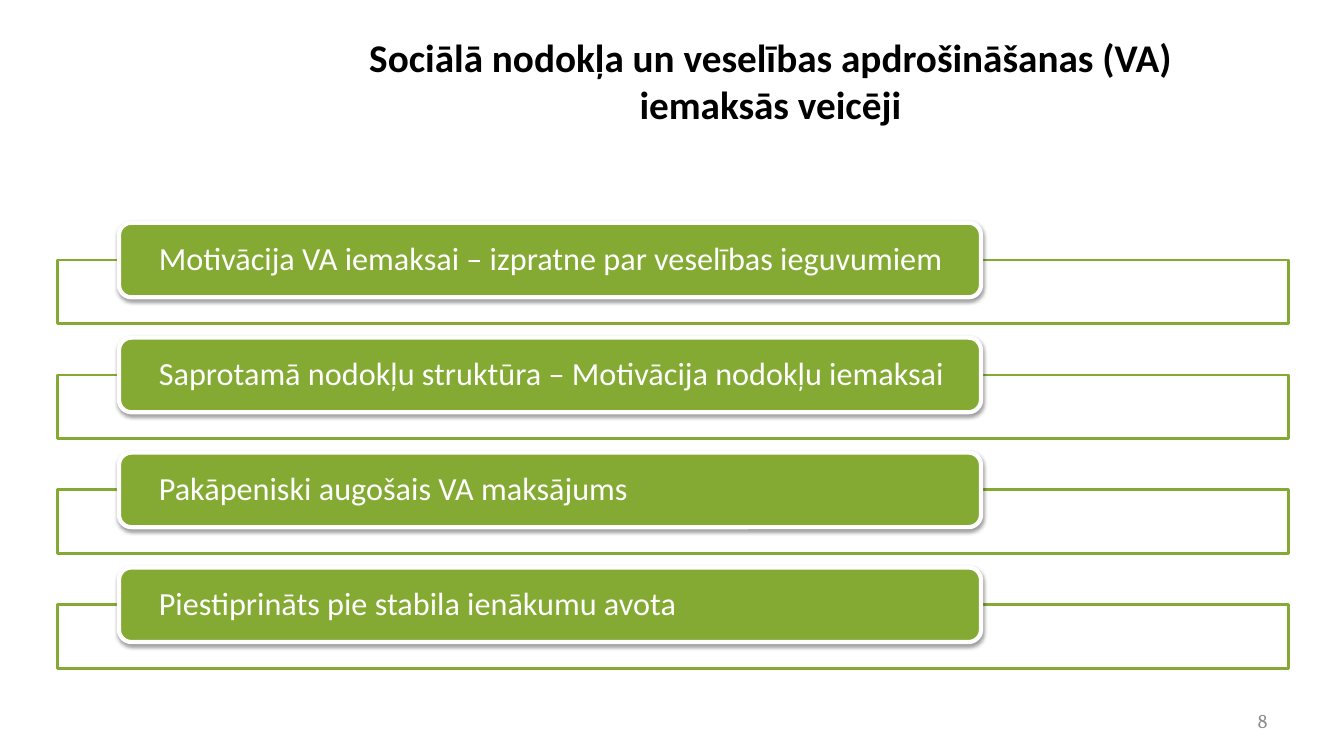
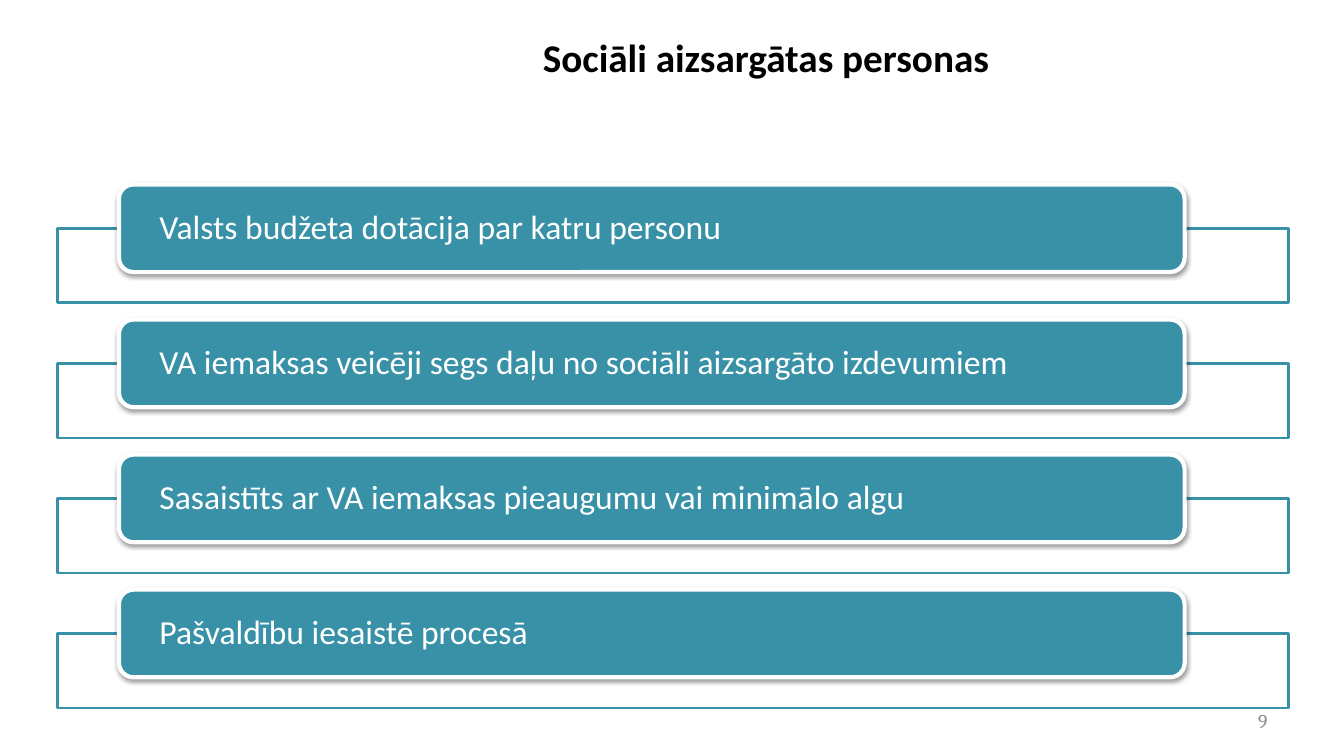
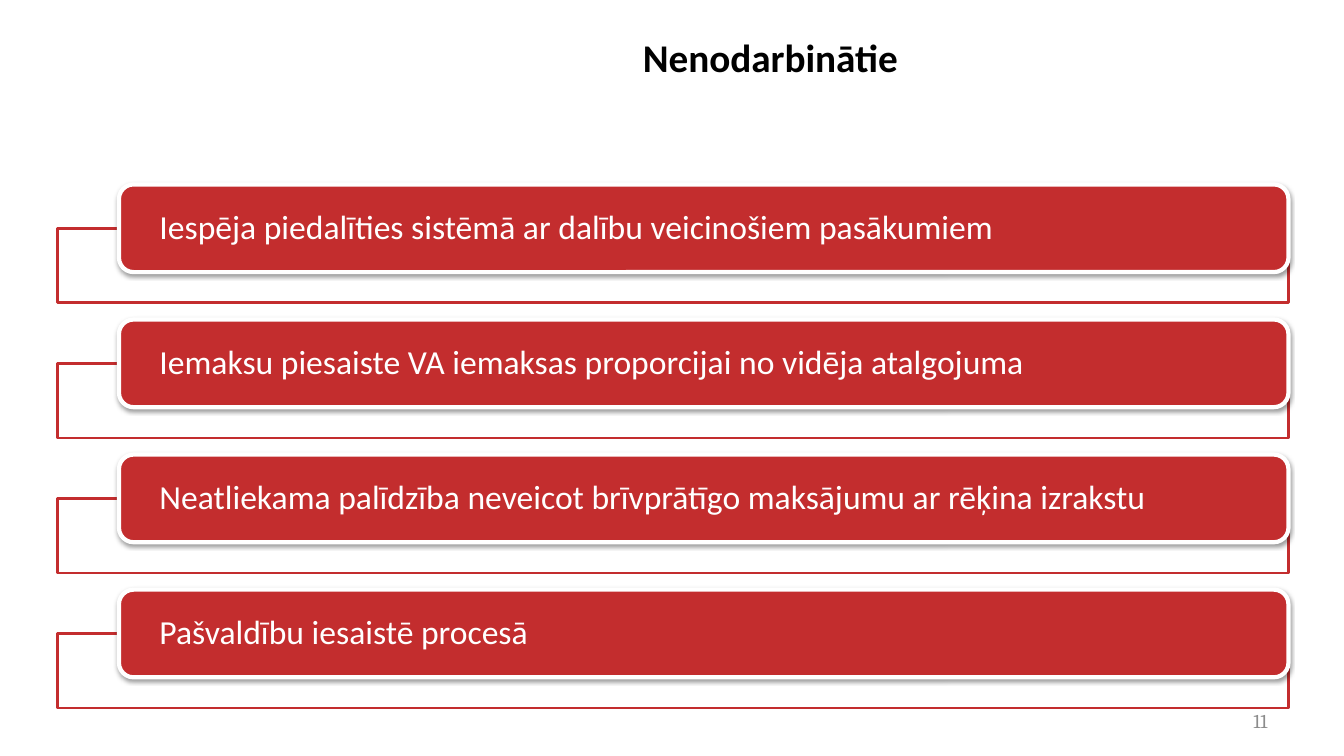
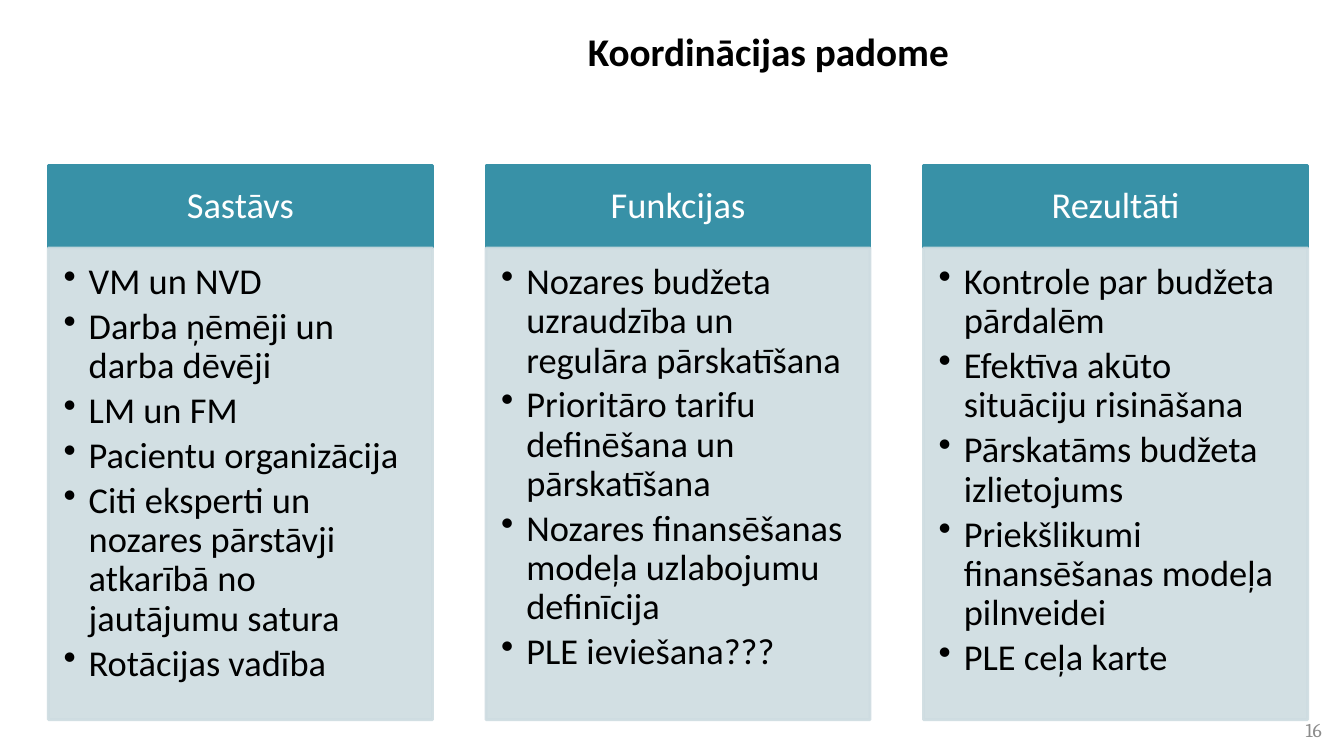
from lxml import etree
from pptx import Presentation
from pptx.dml.color import RGBColor
from pptx.enum import shapes, text
from pptx.oxml import ns
from pptx.util import Inches, Pt

GREEN, TEAL, RED = "84AA33", "3891A7", "C32D2E"
PALE, WHITE, BLACK, GREY = "CEDCE1", "FFFFFF", "000000", "8C8C8C"
LEFT, CENTER, RIGHT = text.PP_ALIGN.LEFT, text.PP_ALIGN.CENTER, text.PP_ALIGN.RIGHT
TOP, MIDDLE = text.MSO_ANCHOR.TOP, text.MSO_ANCHOR.MIDDLE
RECT, ROUND = shapes.MSO_SHAPE.RECTANGLE, shapes.MSO_SHAPE.ROUNDED_RECTANGLE


def rgb(value):
    return RGBColor.from_string(value)


def child(parent, tag, **attrs):
    return etree.SubElement(parent, ns.qn(tag), {k: str(v) for k, v in attrs.items()})


class Deck:
    def __init__(self):
        self.prs = Presentation()
        self.prs.slide_width = Inches(13.33)
        self.prs.slide_height = Inches(7.5)
        self.slide = None

    def start(self, title, number, left=3.44, top=0.28, height=1.04, number_at=(9.56, 6.95)):
        self.slide = self.prs.slides.add_slide(self.prs.slide_layouts[5])
        sp = self.slide.shapes.title
        sp.left, sp.top = Inches(left), Inches(top)
        sp.width, sp.height = Inches(8.4), Inches(height)
        self.set_text(sp, [title], 28, BLACK, align=CENTER, anchor=TOP, bold=True)
        box = self.slide.shapes.add_textbox(*map(Inches, (*number_at, 3.11, 0.4)))
        self.set_text(box, [number], 14, GREY, align=RIGHT, font="Cambria")

    def set_text(self, sp, lines, size, color, align=LEFT, anchor=MIDDLE,
                 insets=(0.1, 0.05, 0.1, 0.05), font="Calibri", bold=False,
                 spacing=1.0, after=0, bullets=False):
        tf = sp.text_frame
        tf.word_wrap = True
        tf.auto_size = text.MSO_AUTO_SIZE.NONE
        tf.vertical_anchor = anchor
        tf.margin_left, tf.margin_top, tf.margin_right, tf.margin_bottom = map(Inches, insets)
        for i, line in enumerate(lines):
            p = tf.add_paragraph() if i else tf.paragraphs[0]
            p.text = line
            if bullets:
                pPr = p._p.get_or_add_pPr()
                pPr.set("marL", str(Inches(0.25)))
                pPr.set("indent", str(Inches(-0.25)))
                child(pPr, "a:buChar", char="•")
            p.alignment = align
            p.line_spacing = spacing
            p.space_after = Pt(after)
            p.font.name, p.font.size, p.font.bold = font, Pt(size), bold
            p.font.color.rgb = rgb(color)

    def box(self, kind, at, fill, line, width=2, alpha=None):
        sp = self.slide.shapes.add_shape(kind, *map(Inches, at))
        sp.shadow.inherit = False
        sp.fill.solid()
        sp.fill.fore_color.rgb = rgb(fill)
        sp.line.color.rgb = rgb(line)
        sp.line.width = Pt(width)
        if alpha:
            for clr in sp._element.spPr.iter(ns.qn("a:srgbClr")):
                child(clr, "a:alpha", val=alpha * 1000)
        return sp

    def drop_shadow(self, sp):
        effects = sp._element.spPr.find(ns.qn("a:effectLst"))
        shadow = child(effects, "a:outerShdw", blurRad=Pt(3.1), dist=Pt(1.6),
                       dir=90 * 60000, rotWithShape=0)
        child(child(shadow, "a:srgbClr", val=BLACK), "a:alpha", val=38000)

    def banners(self, lines, color, top, pitch, width, height, frame_height, size):
        for i, line in enumerate(lines):
            y = top + i * pitch
            self.box(RECT, (0.57, y + height / 2, 12.21, frame_height), WHITE, color)
            sp = self.box(ROUND, (1.18, y, width, height), color, WHITE, width=3)
            self.drop_shadow(sp)
            self.set_text(sp, [line], size, WHITE, insets=(0.36, 0, 0.2, 0), spacing=0.9)

    def columns(self, groups):
        for i, (heading, items) in enumerate(groups):
            x = 0.48 + i * 4.34
            sp = self.box(RECT, (x, 1.64, 3.81, 0.82), TEAL, TEAL)
            self.set_text(sp, [heading], 26, WHITE, align=CENTER,
                          insets=(0.2, 0.12, 0.2, 0.12), spacing=0.9)
            sp = self.box(RECT, (x, 2.46, 3.81, 4.68), PALE, PALE, alpha=90)
            self.set_text(sp, items, 26, BLACK, anchor=TOP, insets=(0.15, 0.15, 0.2, 0.23),
                          spacing=0.9, after=4, bullets=True)


def main():
    deck = Deck()
    tall = dict(top=1.83, pitch=1.34, height=0.87, frame_height=0.74, size=24)

    deck.start("Sociālā nodokļa un veselības apdrošināšanas (VA) iemaksās veicēji", "8", height=1.51)
    deck.banners([
        "Motivācija VA iemaksai – izpratne par veselības ieguvumiem",
        "Saprotamā nodokļu struktūra – Motivācija nodokļu iemaksai",
        "Pakāpeniski augošais VA maksājums",
        "Piestiprināts pie stabila ienākumu avota",
    ], GREEN, top=2.21, pitch=1.14, width=8.55, height=0.74, frame_height=0.63, size=23)

    deck.start("Sociāli aizsargātas personas ", "9")
    deck.banners([
        "Valsts budžeta dotācija par katru personu",
        "VA iemaksas veicēji segs daļu no sociāli aizsargāto izdevumiem",
        "Sasaistīts ar VA iemaksas pieaugumu vai minimālo algu",
        "Pašvaldību iesaistē procesā",
    ], TEAL, width=10.57, **tall)

    deck.start("Nenodarbinātie", "11")
    deck.banners([
        "Iespēja piedalīties sistēmā ar dalību veicinošiem pasākumiem",
        "Iemaksu piesaiste VA iemaksas proporcijai no vidēja atalgojuma",
        "Neatliekama palīdzība neveicot brīvprātīgo maksājumu ar rēķina izrakstu",
        "Pašvaldību iesaistē procesā",
    ], RED, width=11.6, **tall)

    deck.start("Koordinācijas padome", "16", left=3.42, top=0.22, number_at=(10.1, 7.04))
    deck.columns([
        ("Sastāvs", [
            "VM un NVD",
            "Darba ņēmēji un darba dēvēji",
            "LM un FM",
            "Pacientu organizācija",
            "Citi eksperti un nozares pārstāvji atkarībā no jautājumu satura",
            "Rotācijas vadība",
        ]),
        ("Funkcijas", [
            "Nozares budžeta uzraudzība un regulāra pārskatīšana",
            "Prioritāro tarifu definēšana un pārskatīšana",
            "Nozares finansēšanas modeļa uzlabojumu definīcija",
            "PLE ieviešana???",
        ]),
        ("Rezultāti", [
            "Kontrole par budžeta pārdalēm",
            "Efektīva akūto situāciju risināšana",
            "Pārskatāms budžeta izlietojums",
            "Priekšlikumi finansēšanas modeļa pilnveidei",
            "PLE ceļa karte",
        ]),
    ])
    deck.prs.save("out.pptx")


if __name__ == "__main__":
    main()
